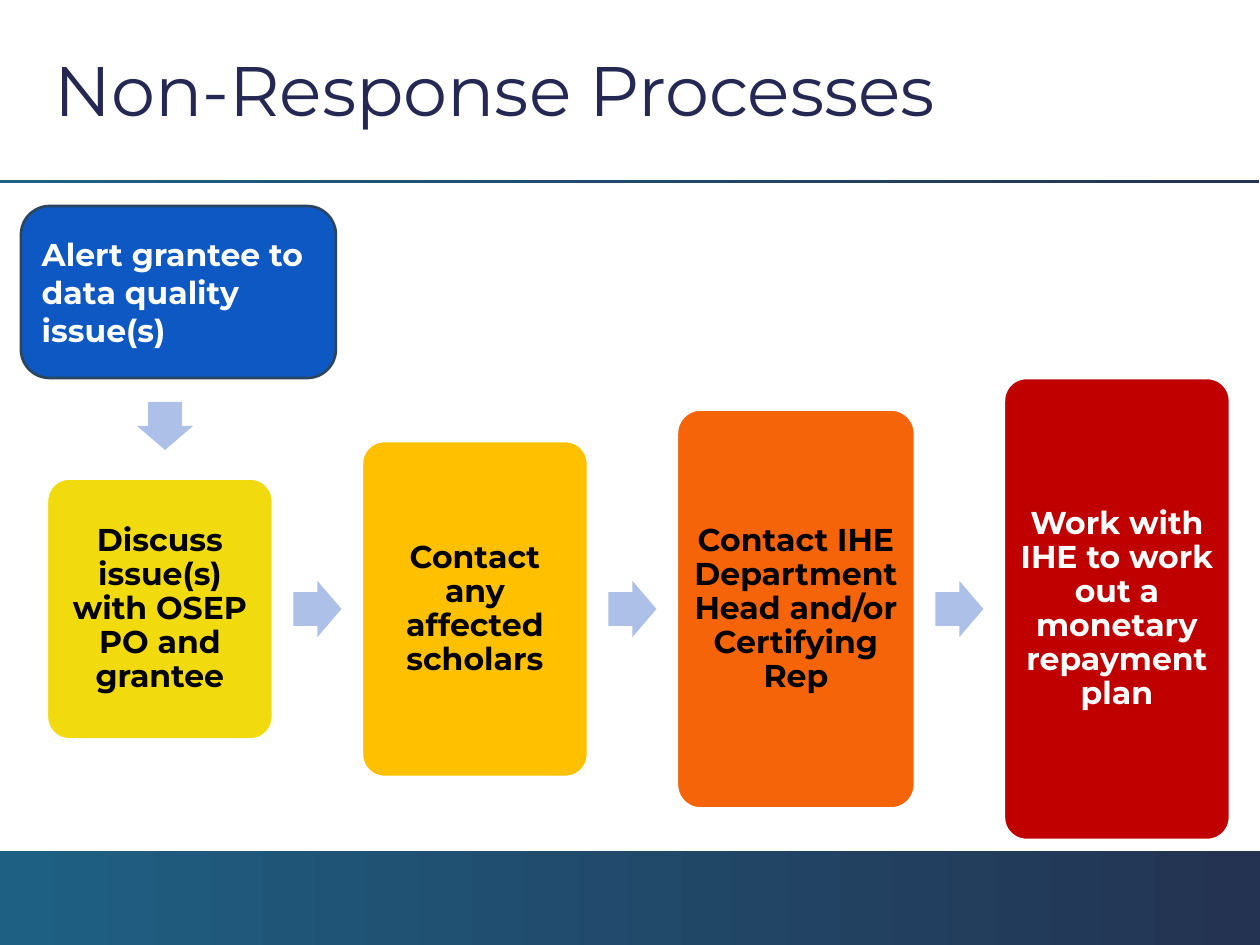
import pptx
import pptx.util
import pptx.dml.color
import pptx.enum.shapes
import pptx.enum.text

PX = 914400 / 126
FONT = "Montserrat"
SHAPE = pptx.enum.shapes.MSO_SHAPE
ALIGN = pptx.enum.text.PP_ALIGN
MIDDLE = pptx.enum.text.MSO_ANCHOR.MIDDLE

TITLE = "Non-Response Processes"
ALERT = "Alert grantee to data quality issue(s)"
# text, width, height, fill, text colour
STEPS = [
    ("Discuss issue(s) with OSEP PO and grantee", 226, 261, "F1DB0F", "000000"),
    ("Contact any affected scholars", 226, 336, "FFC000", "000000"),
    ("Contact IHE Department Head and/or Certifying Rep", 238, 399, "F6640A", "000000"),
    ("Work with IHE to work out a monetary repayment plan", 226, 462, "C00000", "FFFFFF"),
]
STEPS_LEFT, STEPS_MIDDLE, STEP_GAP = 47, 609, 89
ARROW_W, ARROW_H = 48, 56
BANDS = [(0, 851, 1260, 94), (-1, 180, 1260, 3)]


def px(n):
    return pptx.util.Emu(round(n * PX))


def rgb(color):
    return pptx.dml.color.RGBColor.from_string(color)


def add_shape(kind, x, y, w, h, fill=None, line=None):
    s = slide.shapes.add_shape(kind, px(x), px(y), px(w), px(h))
    s.shadow.inherit = False
    if fill:
        s.fill.solid()
        s.fill.fore_color.rgb = rgb(fill)
    if line:
        s.line.color.rgb = rgb(line)
        s.line.width = pptx.util.Pt(1.5)
    else:
        s.line.fill.background()
    return s


def write(s, text, size, color, bold=False, align=ALIGN.LEFT):
    tf = s.text_frame
    tf.word_wrap = True
    tf.vertical_anchor = MIDDLE
    p = tf.paragraphs[0]
    p.alignment = align
    r = p.add_run()
    r.text = text
    r.font.name = FONT
    r.font.size = pptx.util.Pt(size)
    r.font.bold = bold
    r.font.color.rgb = rgb(color)
    return tf


def add_band(x, y, w, h):
    s = add_shape(SHAPE.RECTANGLE, x, y, w, h)
    s.fill.gradient()
    s.fill.gradient_angle = 0
    for stop, color in zip(s.fill.gradient_stops, ("1E6083", "243352")):
        stop.color.rgb = rgb(color)


def add_arrow(cx, cy, rotation=0):
    s = add_shape(SHAPE.RIGHT_ARROW, cx - ARROW_W / 2, cy - ARROW_H / 2,
                  ARROW_W, ARROW_H, "ADC0E7")
    s.adjustments[0] = 0.6
    s.adjustments[1] = 0.5
    s.rotation = rotation


def add_step(x, text, w, h, fill, color):
    s = add_shape(SHAPE.ROUNDED_RECTANGLE, x, STEPS_MIDDLE - h / 2, w, h, fill, "FFFFFF")
    s.adjustments[0] = 0.1
    tf = write(s, text, 18, color, True, ALIGN.CENTER)
    tf.margin_left = tf.margin_right = px(8)
    tf.margin_top = tf.margin_bottom = px(9)
    tf.paragraphs[0].line_spacing = 0.9


prs = pptx.Presentation()
prs.slide_width, prs.slide_height = px(1260), px(945)
slide = prs.slides.add_slide(prs.slide_layouts[5])

for band in BANDS:
    add_band(*band)

title = slide.shapes.title
title.left, title.top, title.width, title.height = px(42), px(21), px(1166), px(136)
write(title, TITLE, 40, "242852")

alert = add_shape(SHAPE.ROUNDED_RECTANGLE, 21, 206, 315, 172, "0E58C4", "2B455C")
write(alert, ALERT, 18, "FFFFFF", True)
add_arrow(165, 426, rotation=90)

x = STEPS_LEFT
for i, (text, w, h, fill, color) in enumerate(STEPS):
    if i:
        add_arrow(x - STEP_GAP / 2, STEPS_MIDDLE)
    add_step(x, text, w, h, fill, color)
    x += w + STEP_GAP

prs.save("out.pptx")
